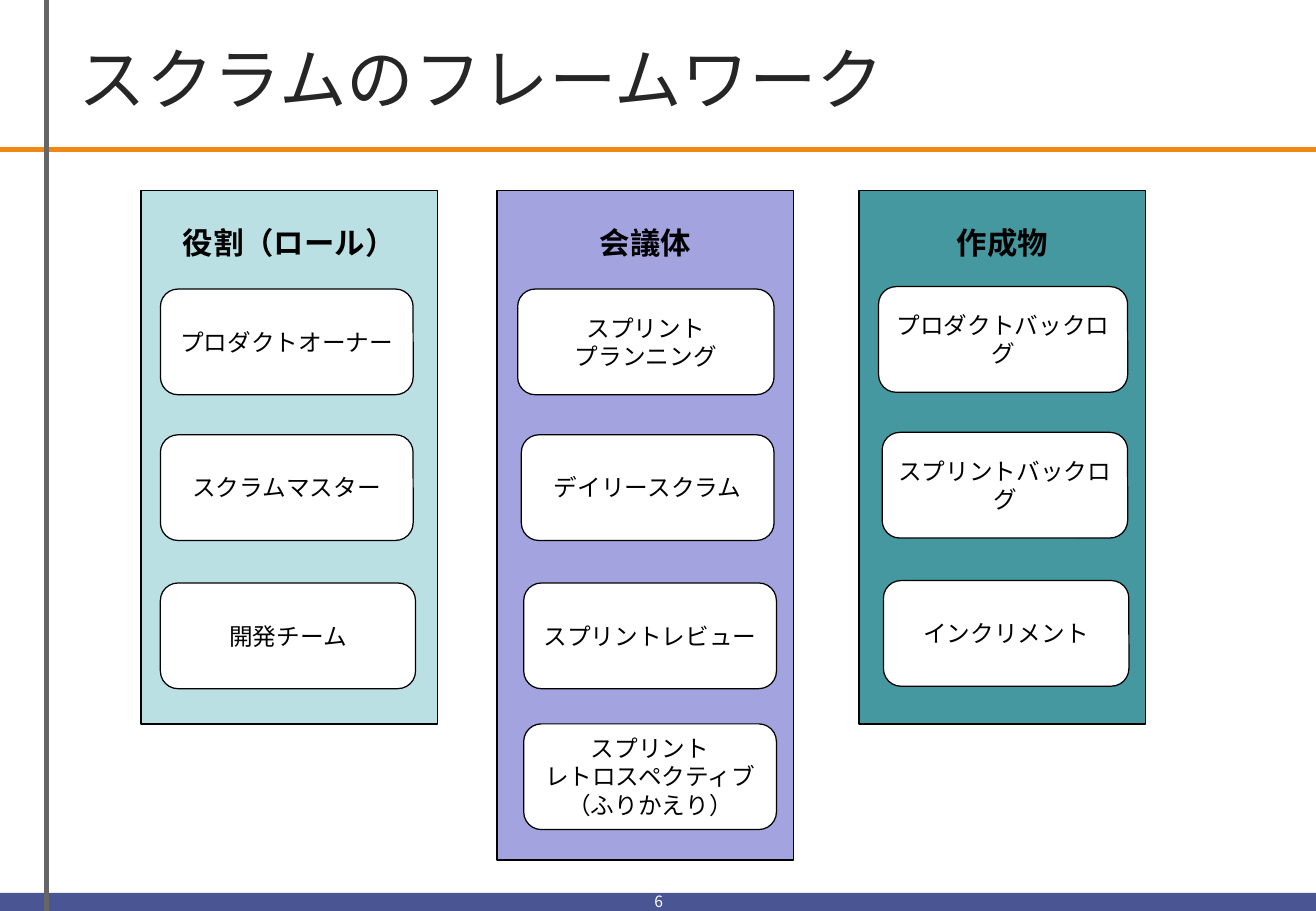
"""Build the slide that shows the Scrum framework in three columns."""
from lxml import etree
from pptx import Presentation
from pptx.dml.color import RGBColor
from pptx.enum.shapes import MSO_CONNECTOR, MSO_SHAPE
from pptx.enum.text import MSO_ANCHOR, PP_ALIGN
from pptx.oxml.ns import qn
from pptx.util import Inches, Pt

LEFT, CENTER = PP_ALIGN.LEFT, PP_ALIGN.CENTER
TOP, MIDDLE, BOTTOM = MSO_ANCHOR.TOP, MSO_ANCHOR.MIDDLE, MSO_ANCHOR.BOTTOM
RECT, CARD = MSO_SHAPE.RECTANGLE, MSO_SHAPE.FLOWCHART_ALTERNATE_PROCESS
STRAIGHT = MSO_CONNECTOR.STRAIGHT
FONT = "Noto Sans CJK JP"
BLACK, WHITE = "000000", "FFFFFF"
WIDE, HIGH = 10.83, 7.5
ROWS = [2.38, 3.58, 4.8, 5.96]

COLUMNS = [
    ("役割（ロール）", "BBE0E3", 1.16, 2.44, 4.39, 0, [
        (1.32, 2.08, ["プロダクトオーナー"]),
        (1.32, 2.08, ["スクラムマスター"]),
        (1.32, 2.1, ["開発チーム"]),
    ]),
    ("会議体", "A3A3E0", 4.09, 2.44, 5.51, 0, [
        (4.26, 2.11, ["スプリント", "プランニング"]),
        (4.29, 2.08, ["デイリースクラム"]),
        (4.31, 2.08, ["スプリントレビュー"]),
        (4.31, 2.08, ["スプリント", "レトロスペクティブ", "（ふりかえり）"]),
    ]),
    ("作成物", "4597A0", 7.07, 2.36, 4.39, -0.02, [
        (7.23, 2.05, ["プロダクトバックログ"]),
        (7.26, 2.02, ["スプリントバックログ"]),
        (7.27, 2.02, ["インクリメント"]),
    ]),
]


def write(shape, lines, size, color, align, anchor, bold=False, pitch=None):
    """Fill a shape with one paragraph per line."""
    frame = shape.text_frame
    frame.word_wrap = True
    frame.vertical_anchor = anchor
    for i, line in enumerate(lines):
        para = frame.add_paragraph() if i else frame.paragraphs[0]
        para.alignment = align
        if pitch:
            para.line_spacing = Pt(pitch)
        run = para.add_run()
        run.text = line
        font = run.font
        font.size, font.bold, font.name = Pt(size), bold, FONT
        font.color.rgb = RGBColor.from_string(color)
        etree.SubElement(run._r.rPr, qn("a:ea"), typeface=FONT)


def block(kind, x, y, w, h, fill, edge=True):
    """Add a filled shape with small text margins."""
    shape = slide.shapes.add_shape(kind, Inches(x), Inches(y), Inches(w), Inches(h))
    shape.shadow.inherit = False
    shape.fill.solid()
    shape.fill.fore_color.rgb = RGBColor.from_string(fill)
    if edge:
        shape.line.color.rgb = RGBColor.from_string(BLACK)
        shape.line.width = Pt(0.75)
    else:
        shape.line.fill.background()
    frame = shape.text_frame
    frame.margin_left = frame.margin_right = Inches(0.04)
    frame.margin_top = frame.margin_bottom = Inches(0.04)
    return shape


deck = Presentation()
deck.slide_width, deck.slide_height = Inches(WIDE), Inches(HIGH)
slide = deck.slides.add_slide(deck.slide_layouts[5])

title = slide.shapes.title
title.left, title.top = Inches(0.55), Inches(0.13)
title.width, title.height = Inches(9.81), Inches(1.02)
write(title, ["スクラムのフレームワーク"], 40, "262626", LEFT, MIDDLE)

block(RECT, 0, 7.35, WIDE, 0.15, "4A5593", edge=False)
for x1, y1, x2, y2, color in [(0, 1.23, WIDE, 1.23, "EF8913"),
                              (0.38, 0, 0.38, HIGH, "666666")]:
    rule = slide.shapes.add_connector(
        STRAIGHT, Inches(x1), Inches(y1), Inches(x2), Inches(y2))
    rule.line.color.rgb = RGBColor.from_string(color)
    rule.line.width = Pt(3)
    etree.SubElement(rule._element.spPr, qn("a:effectLst"))

for head, fill, x, w, h, shift, cards in COLUMNS:
    panel = block(RECT, x, 1.57, w, h, fill)
    write(panel, [head], 18, BLACK, CENTER, TOP, bold=True, pitch=21.4)
    panel.text_frame.margin_top = Inches(0.28)
    for y, (left, width, lines) in zip(ROWS, cards):
        card = block(CARD, left, y + shift, width, 0.87, WHITE)
        write(card, lines, 14, BLACK, CENTER, MIDDLE, pitch=16.6)

page = slide.shapes.add_textbox(Inches(5.05), Inches(7.3), Inches(0.74), Inches(0.25))
write(page, ["6"], 9.2, WHITE, CENTER, BOTTOM)

deck.save("out.pptx")
